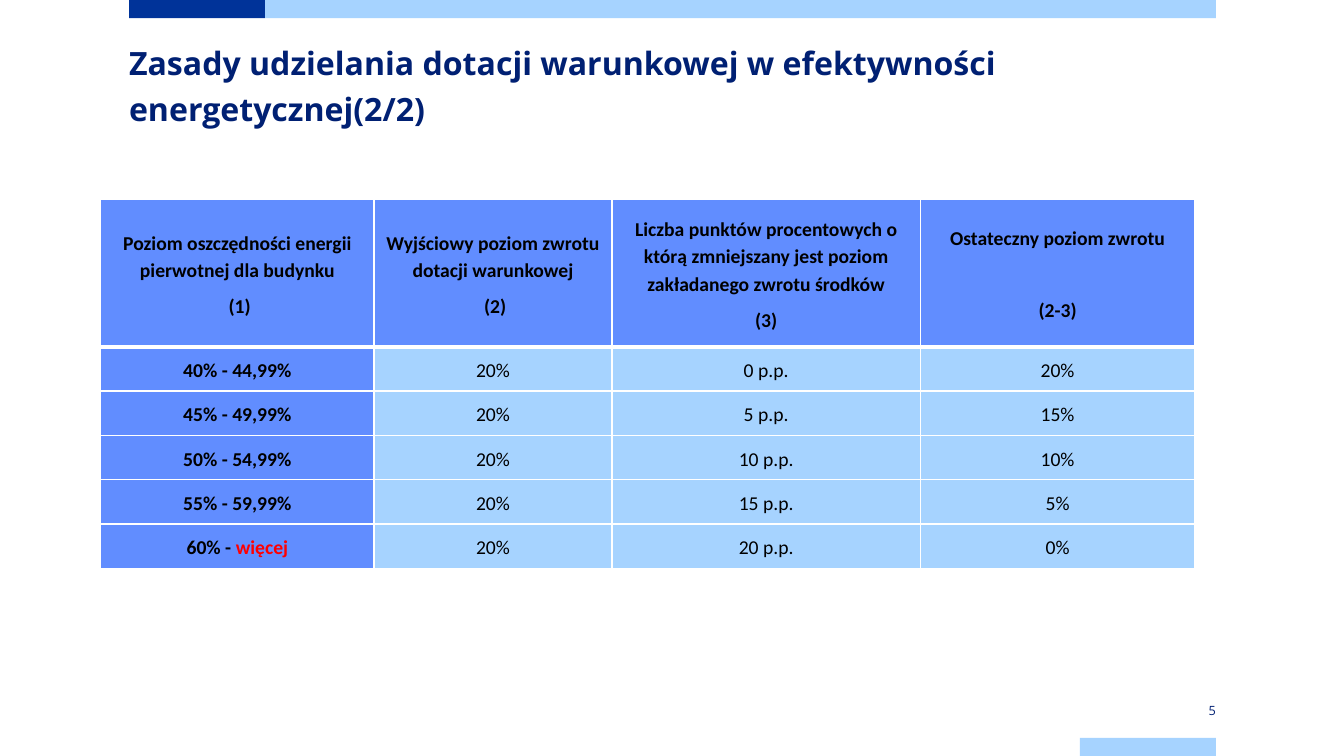
from lxml import etree
from pptx import Presentation
from pptx.dml.color import RGBColor
from pptx.enum import shapes, text
from pptx.oxml import ns
from pptx.util import Inches, Pt

NAVY = RGBColor(0x00, 0x20, 0x73)
DARK_BLUE = RGBColor(0x00, 0x33, 0x99)
MID_BLUE = RGBColor(0x61, 0x8D, 0xFF)
LIGHT_BLUE = RGBColor(0xA6, 0xD3, 0xFF)
BLACK = RGBColor(0x00, 0x00, 0x00)
RED = RGBColor(0xFF, 0x00, 0x00)
WHITE = RGBColor(0xFF, 0xFF, 0xFF)


def add_span(para, words, font, size, color, bold=False):
    span = para.add_run()
    span.text = words
    span.font.name = font
    span.font.size = Pt(size)
    span.font.bold = bold
    span.font.color.rgb = color


def add_borders(cell, bottom_width):
    """Draw white cell borders; they must precede the fill in the cell XML."""
    properties = cell._tc.get_or_add_tcPr()
    widths = {"lnL": 1, "lnR": 1, "lnT": 1, "lnB": bottom_width}
    for index, (side, width) in enumerate(widths.items()):
        line = etree.Element(ns.qn("a:" + side), w=str(Pt(width)))
        fill = etree.SubElement(line, ns.qn("a:solidFill"))
        etree.SubElement(fill, ns.qn("a:srgbClr"), val=str(WHITE))
        properties.insert(index, line)


deck = Presentation()
deck.slide_width = Inches(13.33)
deck.slide_height = Inches(7.5)
page = deck.slides.add_slide(deck.slide_layouts[6])

# Coloured bars at the top and bottom edges
bars = [(1.28, 0, 1.35, DARK_BLUE), (2.63, 0, 9.43, LIGHT_BLUE),
        (10.71, 7.32, 1.35, LIGHT_BLUE)]
for left, top, width, color in bars:
    bar = page.shapes.add_shape(shapes.MSO_SHAPE.RECTANGLE, Inches(left),
                                Inches(top), Inches(width), Inches(0.18))
    bar.shadow.inherit = False
    bar.fill.solid()
    bar.fill.fore_color.rgb = color
    bar.line.fill.background()

# Title and page number
labels = [
    ("Zasady udzielania dotacji warunkowej w efektywności energetycznej(2/2)",
     (1.28, 0.36, 10.65, 0.66), 22.9, True, 32.7,
     text.PP_ALIGN.LEFT, text.MSO_ANCHOR.TOP),
    ("5", (10.71, 6.96, 1.35, 0.18), 9.1, False, None,
     text.PP_ALIGN.RIGHT, text.MSO_ANCHOR.MIDDLE),
]
for words, place, size, bold, spacing, align, anchor in labels:
    box = page.shapes.add_textbox(*map(Inches, place))
    frame = box.text_frame
    frame.word_wrap = True
    frame.vertical_anchor = anchor
    frame.margin_left = frame.margin_right = 0
    frame.margin_top = frame.margin_bottom = 0
    para = frame.paragraphs[0]
    para.alignment = align
    if spacing:
        para.line_spacing = Pt(spacing)
    add_span(para, words, "Open Sans", size, NAVY, bold)

# Repayment table: each cell is a list of paragraphs, each a list of spans
rows = [
    [["Poziom oszczędności energii pierwotnej dla budynku", " (1)"],
     ["Wyjściowy poziom zwrotu dotacji warunkowej", " (2)"],
     ["Liczba punktów procentowych o którą zmniejszany jest poziom "
      "zakładanego zwrotu środków", "(3)"],
     ["Ostateczny poziom zwrotu", "(2-3)"]],
    [["40% - 44,99%"], ["20%"], ["0 p.p."], ["20%"]],
    [["45% - 49,99%"], ["20%"], ["5 p.p."], ["15%"]],
    [["50% - 54,99%"], ["20%"], ["10 p.p."], ["10%"]],
    [["55% - 59,99%"], ["20%"], ["15 p.p."], ["5%"]],
    [["60% - "], ["20%"], ["20 p.p."], ["0%"]],
]
column_widths = [2.71, 2.36, 3.06, 2.72]
header_height, row_height = 1.46, 0.44
table = page.shapes.add_table(
    len(rows), len(column_widths), Inches(1), Inches(1.98),
    Inches(sum(column_widths)),
    Inches(header_height + row_height * (len(rows) - 1))).table
for column, width in zip(table.columns, column_widths):
    column.width = Inches(width)

for row_index, row in enumerate(rows):
    is_header = row_index == 0
    table.rows[row_index].height = Inches(header_height if is_header else row_height)
    for column_index, paragraphs in enumerate(row):
        cell = table.cell(row_index, column_index)
        emphasis = is_header or column_index == 0
        cell.fill.solid()
        cell.fill.fore_color.rgb = MID_BLUE if emphasis else LIGHT_BLUE
        add_borders(cell, 3 if is_header else 1)
        cell.vertical_anchor = text.MSO_ANCHOR.MIDDLE
        cell.margin_left = cell.margin_right = Inches(0.07)
        cell.margin_top = cell.margin_bottom = 0
        for index, words in enumerate(paragraphs):
            frame = cell.text_frame
            para = frame.add_paragraph() if index else frame.paragraphs[0]
            para.alignment = text.PP_ALIGN.CENTER
            para.line_spacing = 1.15
            para.space_after = Pt(6)
            add_span(para, words, "Calibri", 14, BLACK, emphasis)

# The last heading keeps its number one line further down
table.cell(0, 3).text_frame.paragraphs[0].space_after = Pt(31.7)
add_span(table.cell(5, 0).text_frame.paragraphs[0], "więcej", "Calibri", 14, RED, True)

deck.save("out.pptx")
